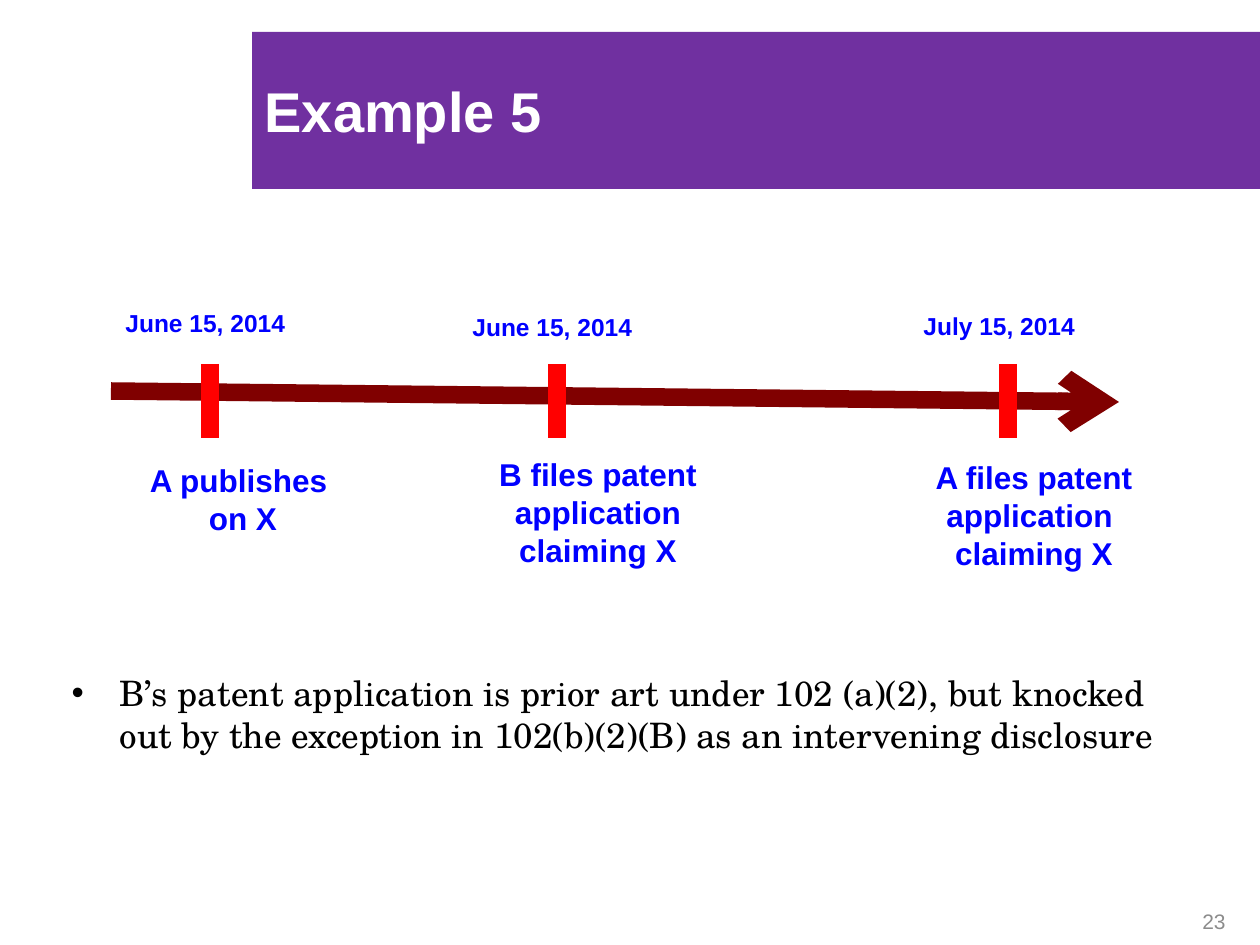
from dataclasses import dataclass

from lxml.etree import SubElement
from pptx import Presentation
from pptx.dml.color import RGBColor
from pptx.enum.shapes import MSO_CONNECTOR
from pptx.enum.text import MSO_ANCHOR, MSO_AUTO_SIZE, PP_ALIGN
from pptx.oxml.ns import qn
from pptx.util import Pt

EMU_PER_PX = 914400 / 126


@dataclass(frozen=True)
class Theme:
    """Colours, fonts and type sizes of the slide."""
    banner: str = "7030A0"
    banner_text: str = "FFFFFF"
    axis: str = "800000"
    tick: str = "FF0000"
    label: str = "0000FF"
    body: str = "000000"
    muted: str = "8C8C8C"
    sans: str = "Arial"
    serif: str = "TeX Gyre Schola"
    title_size: int = 32
    body_size: int = 20
    event_size: int = 18
    date_size: int = 14
    number_size: int = 12
    line_width: int = 10


THEME = Theme()
TICK_TOP, TICK_BOTTOM = 364, 438
EVENTS = [
    (210, "June 15, 2014", (113, 302, 194), "A publishes \von X", (112, 455, 262, 89)),
    (557, "June 15, 2014", (460, 306, 194), "B files patent application claiming X", (472, 449, 252, 127)),
    (1008, "July 15, 2014", (911, 305, 194), "A files patent application \vclaiming X", (903, 452, 262, 127)),
]


def px(length):
    """Turn pixels into EMU."""
    return round(length * EMU_PER_PX)


def place(shape, left, top, width, height):
    """Move and size a shape in pixels."""
    shape.left, shape.top, shape.width, shape.height = map(px, (left, top, width, height))


def write(frame, text, size, color, font=THEME.sans, bold=False, align=PP_ALIGN.LEFT):
    """Write one formatted paragraph and return it."""
    frame.word_wrap = True
    paragraph = frame.paragraphs[0]
    paragraph.text = text
    paragraph.alignment = align
    paragraph.space_before = Pt(0)
    paragraph.font.name = font
    paragraph.font.size = Pt(size)
    paragraph.font.bold = bold
    paragraph.font.color.rgb = RGBColor.from_string(color)
    return paragraph


def add_label(page, bounds, text, size, color, **style):
    """Add a text box and return its frame."""
    frame = page.shapes.add_textbox(*map(px, bounds)).text_frame
    write(frame, text, size, color, **style)
    return frame


def add_line(page, start, end, color, arrow=False):
    """Add a thick straight line, with an arrowhead if asked."""
    line = page.shapes.add_connector(MSO_CONNECTOR.STRAIGHT, *map(px, start + end))
    line.line.color.rgb = RGBColor.from_string(color)
    line.line.width = Pt(THEME.line_width)
    if arrow:
        SubElement(line.line._get_or_add_ln(), qn("a:tailEnd"), type="arrow")
    SubElement(line._element.spPr, qn("a:effectLst"))


def fill_title(page, text):
    """Turn the title placeholder into the banner."""
    title = page.shapes.title
    place(title, 252, 32, 1008, 157)
    title.fill.solid()
    title.fill.fore_color.rgb = RGBColor.from_string(THEME.banner)
    write(title.text_frame, text, THEME.title_size, THEME.banner_text, bold=True)
    title.text_frame.vertical_anchor = MSO_ANCHOR.MIDDLE


def fill_body(page, text):
    """Write the bulleted conclusion in the body placeholder."""
    body = page.placeholders[1]
    place(body, 59, 665, 1158, 228)
    body.text_frame.auto_size = MSO_AUTO_SIZE.NONE
    properties = body.text_frame.paragraphs[0]._p.get_or_add_pPr()
    properties.set("marL", str(px(48)))
    properties.set("indent", str(px(-48)))
    SubElement(properties, qn("a:buFont"), typeface=THEME.sans)
    SubElement(properties, qn("a:buChar"), char="•")
    write(body.text_frame, text, THEME.body_size, THEME.body, font=THEME.serif)


def add_event(page, center, date, date_place, event, event_bounds):
    """Add a tick on the timeline with its date and event."""
    add_line(page, (center, TICK_TOP), (center, TICK_BOTTOM), THEME.tick)
    add_label(page, date_place + (43,), date, THEME.date_size, THEME.label, bold=True)
    add_label(page, event_bounds, event, THEME.event_size, THEME.label,
              bold=True, align=PP_ALIGN.CENTER)


def add_page_number(page, number):
    """Add the page number at the bottom right."""
    frame = add_label(page, (976, 872, 262, 63), number, THEME.number_size,
                      THEME.muted, align=PP_ALIGN.RIGHT)
    frame.vertical_anchor = MSO_ANCHOR.BOTTOM
    frame.margin_bottom = px(1)


def main():
    """Build and save the slide."""
    deck = Presentation()
    deck.slide_width, deck.slide_height = px(1260), px(945)
    page = deck.slides.add_slide(deck.slide_layouts[1])
    fill_title(page, "Example 5")
    fill_body(page, "B’s patent application is prior art under 102 (a)(2), but knocked "
                    "out by the exception in 102(b)(2)(B) as an intervening disclosure")
    add_line(page, (111, 391), (1119, 402), THEME.axis, arrow=True)
    for event in EVENTS:
        add_event(page, *event)
    add_page_number(page, "23")
    deck.save("out.pptx")


if __name__ == "__main__":
    main()
